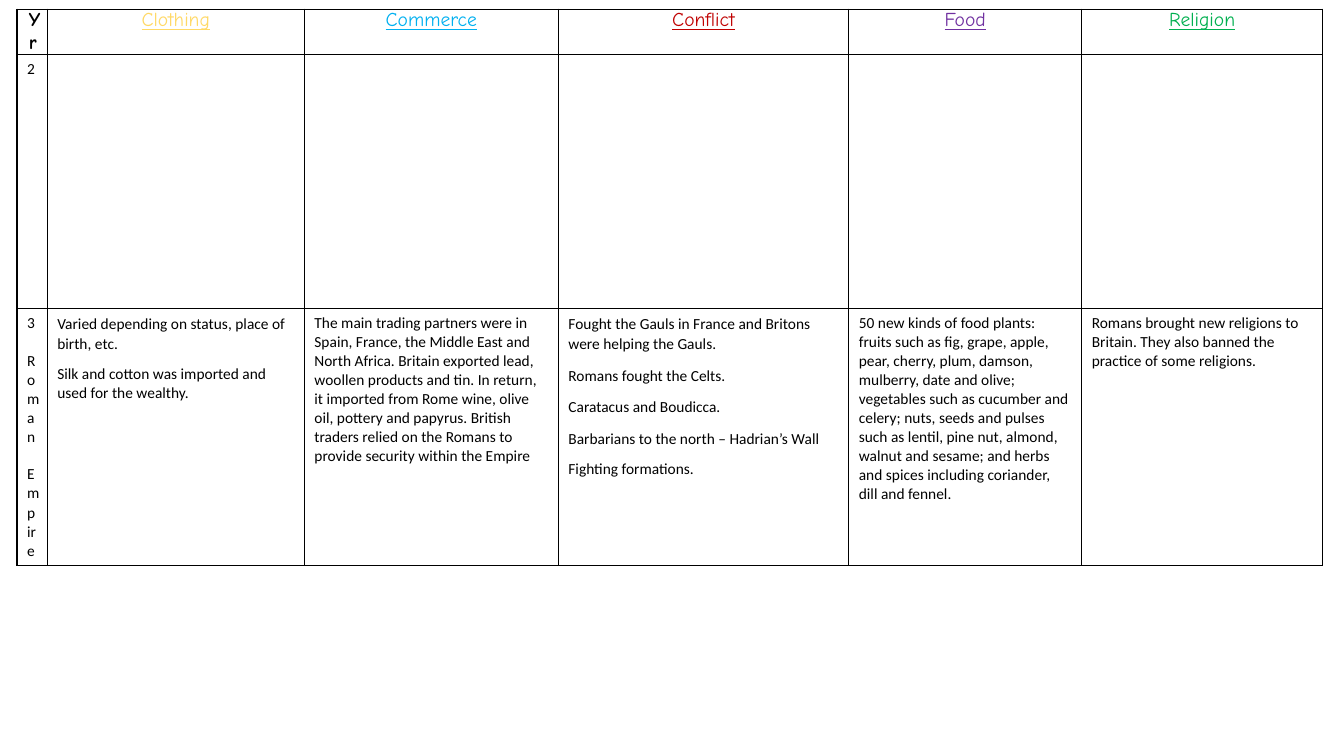
from dataclasses import dataclass

from lxml import etree
from pptx import Presentation
from pptx import util as u
from pptx.dml.color import RGBColor
from pptx.enum import text
from pptx.oxml import ns

BLACK = "000000"


@dataclass
class Para:
    words: str
    before: float = 0
    after: float = 0
    line: float = 1.0


@dataclass
class Theme:
    name: str
    color: str
    width: float  # cm
    notes: list[Para]


def spaced(words: str) -> Para:
    return Para(words, after=8, line=1.07)


THEMES = [
    Theme("Yr", BLACK, 0.76, [
        Para("3"), Para("Roman", before=13.5), Para("Empire", before=13.5)]),
    Theme("Clothing", "FFD966", 6.48, [
        spaced("Varied depending on status, place of birth, etc."),
        Para("Silk and cotton was imported and used for the wealthy.")]),
    Theme("Commerce", "00B0F0", 6.4, [
        Para("The main trading partners were in Spain, France, the Middle East and "
             "North Africa. Britain exported lead, woollen products and tin. In return, "
             "it imported from Rome wine, olive oil, pottery and papyrus. British "
             "traders relied on the Romans to provide security within the Empire")]),
    Theme("Conflict", "C00000", 7.32, [
        spaced("Fought the Gauls in France and Britons were helping the Gauls."),
        spaced("Romans fought the Celts."),
        spaced("Caratacus and Boudicca."),
        spaced("Barbarians to the north – Hadrian’s Wall"),
        Para("Fighting formations.")]),
    Theme("Food", "7030A0", 5.87, [
        Para("50 new kinds of food plants: fruits such as fig, grape, apple, pear, "
             "cherry, plum, damson, mulberry, date and olive; vegetables such as "
             "cucumber and celery; nuts, seeds and pulses such as lentil, pine nut, "
             "almond, walnut and sesame; and herbs and spices including coriander, "
             "dill and fennel.")]),
    Theme("Religion", "00B050", 6.07, [
        Para("Romans brought new religions to Britain. They also banned the practice "
             "of some religions.")]),
]
ROW_HEIGHTS = [1.14, 6.4, 6.4]


def rgb(value: str) -> RGBColor:
    return RGBColor.from_string(value)


def outline(cell) -> None:
    """Clear the fill and draw a thin black line on all four sides."""
    props = cell._tc.get_or_add_tcPr()
    for side in ("a:lnL", "a:lnR", "a:lnT", "a:lnB"):
        line = etree.SubElement(props, ns.qn(side), w=str(u.Pt(1)))
        solid = etree.SubElement(line, ns.qn("a:solidFill"))
        etree.SubElement(solid, ns.qn("a:srgbClr"), val=BLACK)
    cell.fill.background()


def add_run(paragraph, words: str, font: str, size: float, color: str):
    run = paragraph.add_run()
    run.text = words
    run.font.name, run.font.size = font, u.Pt(size)
    run.font.color.rgb = rgb(color)
    return run


def write_heading(cell, theme: Theme) -> None:
    cell.margin_left = cell.margin_right = u.Cm(0.3)
    cell.margin_top = cell.margin_bottom = 0
    heading = cell.text_frame.paragraphs[0]
    heading.alignment = text.PP_ALIGN.CENTER
    run = add_run(heading, theme.name, "Comic Neue", 14, theme.color)
    is_year = theme.name == "Yr"
    run.font.bold, run.font.underline = is_year, not is_year


def write_notes(cell, notes: list[Para]) -> None:
    frame = cell.text_frame
    for i, note in enumerate(notes):
        paragraph = frame.add_paragraph() if i else frame.paragraphs[0]
        paragraph.line_spacing = note.line
        paragraph.space_before = u.Pt(note.before)
        paragraph.space_after = u.Pt(note.after)
        add_run(paragraph, note.words, "Calibri", 11, BLACK)


def main() -> None:
    deck = Presentation()
    deck.slide_width, deck.slide_height = u.Cm(33.87), u.Cm(19.05)
    slide = deck.slides.add_slide(deck.slide_layouts[6])

    # Table grid
    total_width = sum(theme.width for theme in THEMES)
    grid = slide.shapes.add_table(
        len(ROW_HEIGHTS), len(THEMES), u.Cm(0.43), u.Cm(0.23),
        u.Cm(total_width), u.Cm(sum(ROW_HEIGHTS))).table
    grid.first_row = grid.horz_banding = False
    for row, height in zip(grid.rows, ROW_HEIGHTS):
        row.height = u.Cm(height)
    for cell in grid.iter_cells():
        outline(cell)

    # Headings and the Year 3 row
    for col, theme in enumerate(THEMES):
        grid.columns[col].width = u.Cm(theme.width)
        write_heading(grid.cell(0, col), theme)
        write_notes(grid.cell(2, col), theme.notes)

    # Year 2 row, still to be filled in
    write_notes(grid.cell(1, 0), [Para("2")])

    deck.save("out.pptx")


if __name__ == "__main__":
    main()
